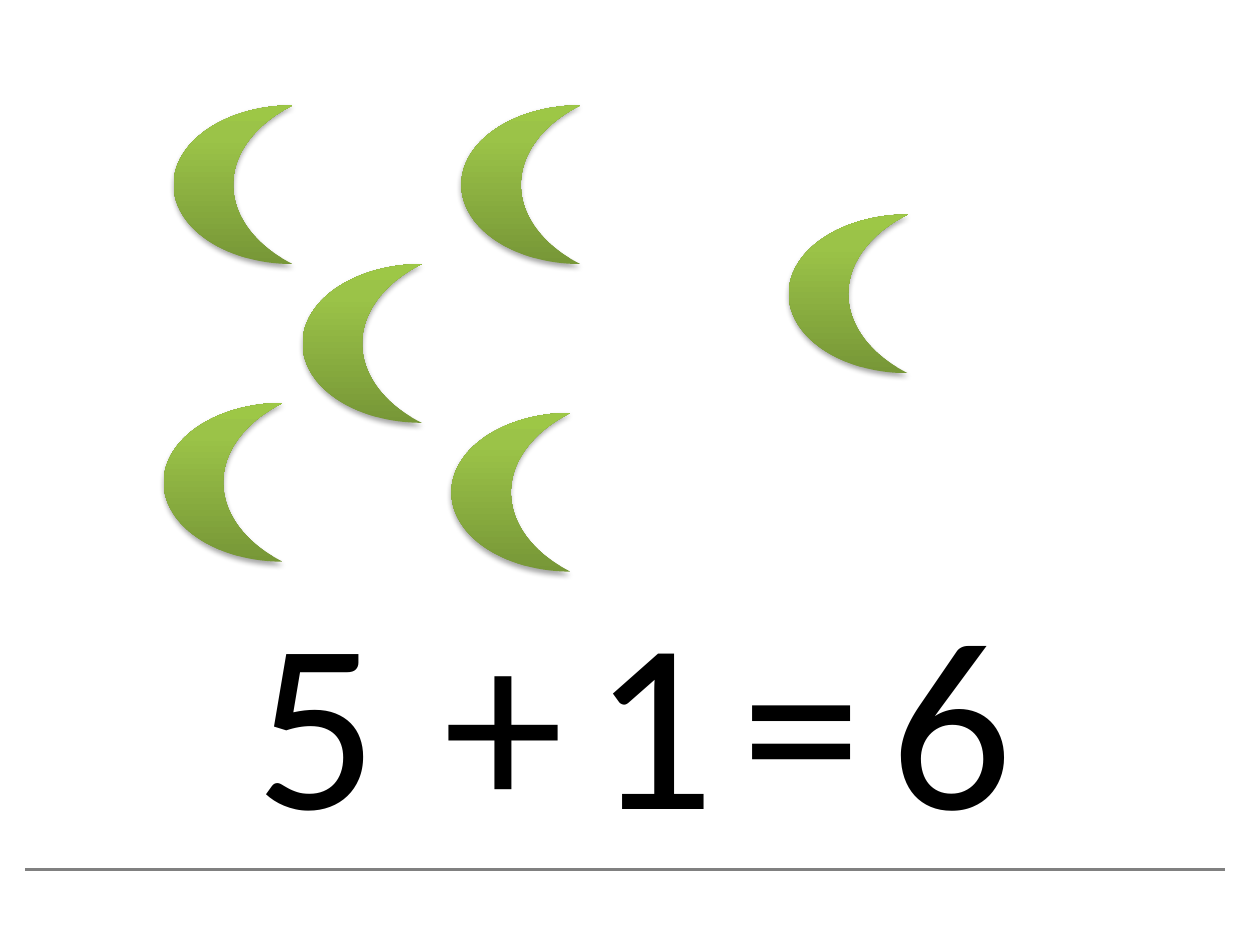
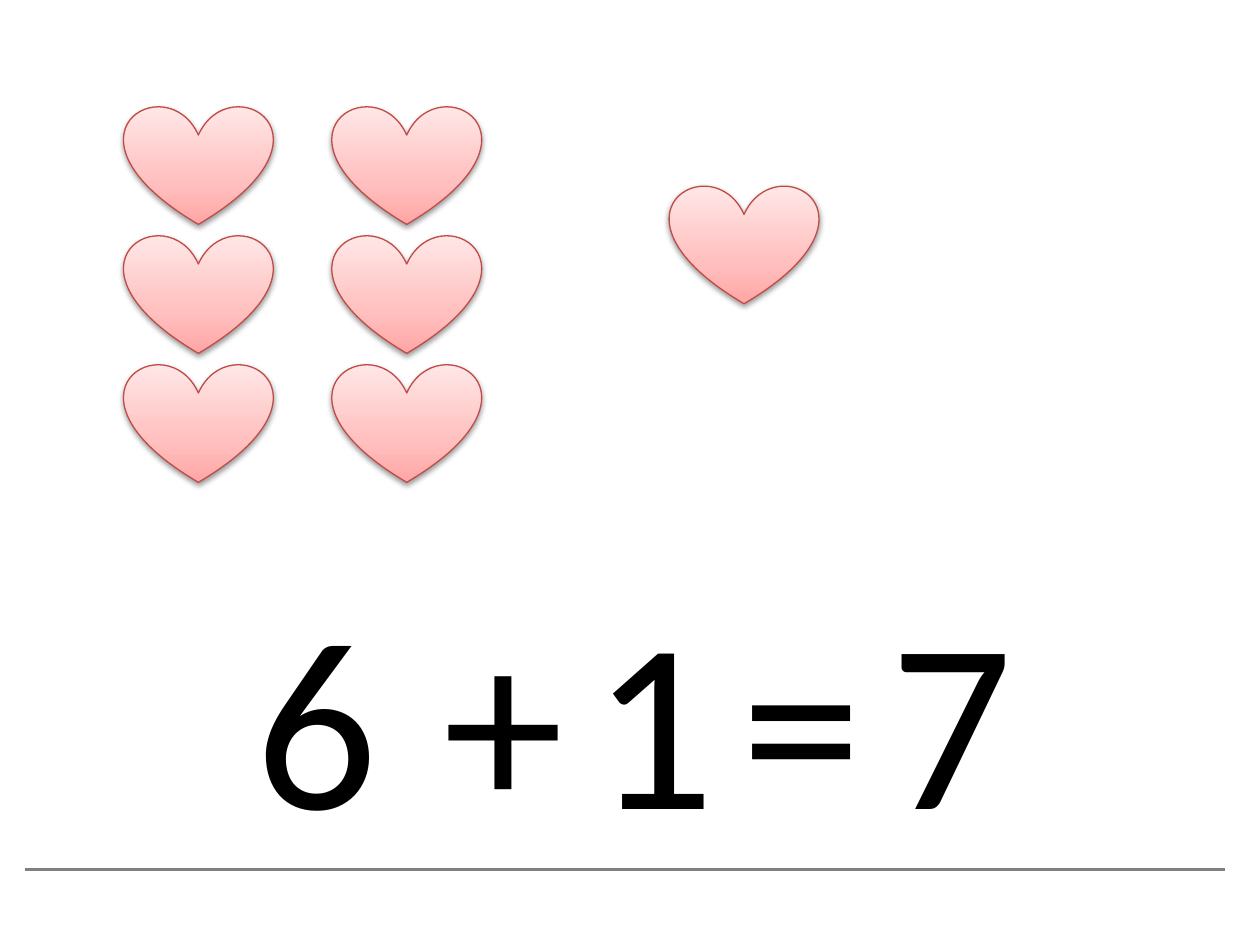
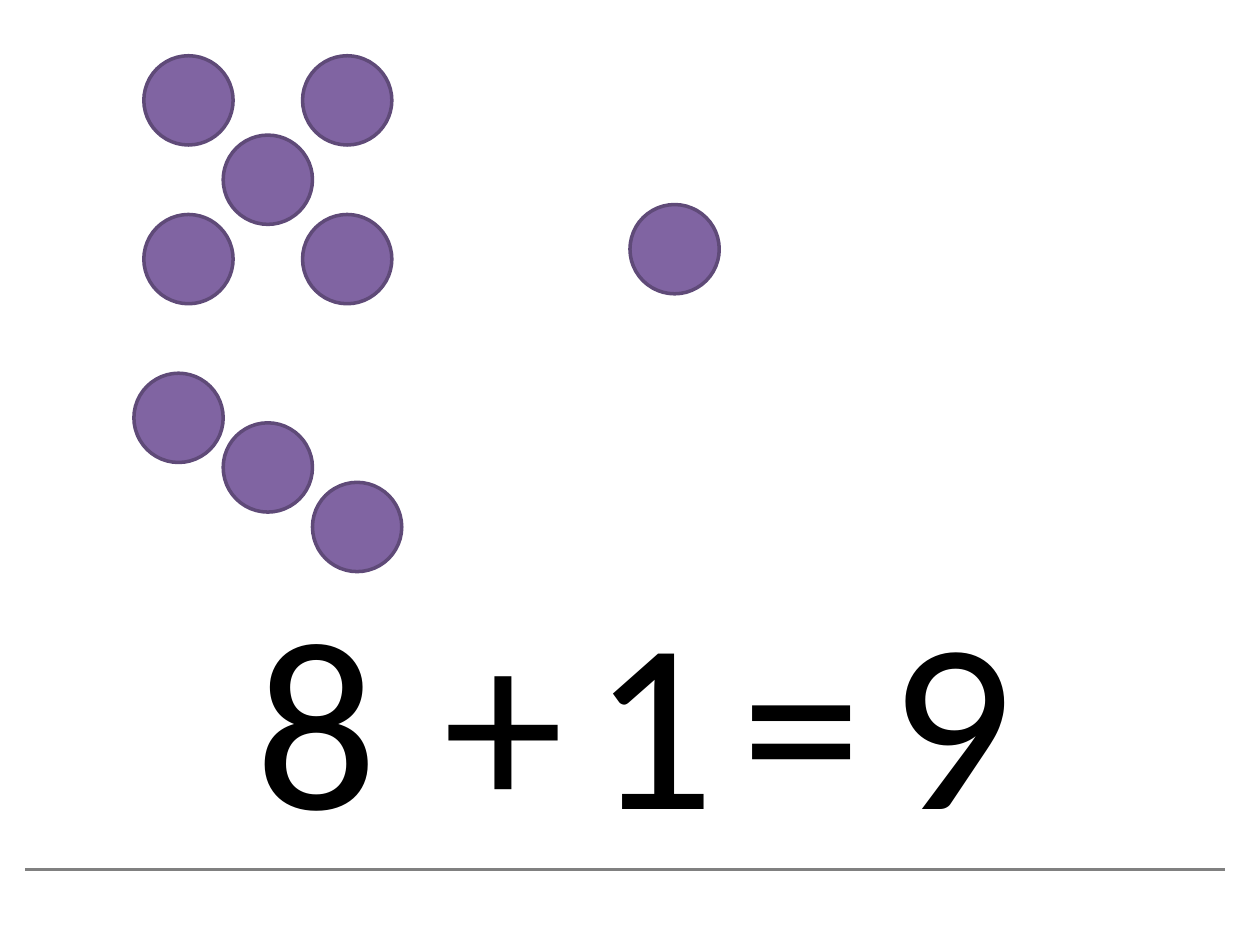
"""Build three counting slides that each add one more shape to a group."""
from lxml import etree
from pptx import Presentation
from pptx.dml.color import RGBColor
from pptx.enum.shapes import MSO_CONNECTOR, MSO_SHAPE
from pptx.enum.text import MSO_AUTO_SIZE
from pptx.oxml.ns import qn
from pptx.util import Pt

MOON, HEART, OVAL = MSO_SHAPE.MOON, MSO_SHAPE.HEART, MSO_SHAPE.OVAL
STRAIGHT = MSO_CONNECTOR.STRAIGHT
FIT_TEXT = MSO_AUTO_SIZE.SHAPE_TO_FIT_TEXT

FONT, FONT_SIZE = "Calibri", 138
BLACK, GRAY = "000000", "808080"
RULE_LEFT, RULE_RIGHT, RULE_TOP = 14.4, 699.84, 496.8
SUM_TOP, SUM_WIDTH, SUM_HEIGHT = 321.12, 108, 174.24
SUM_LEFT, PLUS_LEFT, SIGN_STEP = 138.9, 246.61, 85.04
ONE_LEFT, EQUALS_LEFT, TOTAL_LEFT = [PLUS_LEFT + SIGN_STEP * i for i in (1, 2, 3)]

HEART_COLUMNS = (189.92, 70.87)
HEART_ROWS = [60.21 + 73.7 * i for i in (2, 1, 0)]

SLIDES = [
    {
        "start": "5",
        "total": "6",
        "kind": MOON,
        "size": (68.03, 90.71),
        "gradient": [(0, "779737"), (80, "9BC348"), (100, "9DC746")],
        "shadow": {"alpha": 35, "dist": 1.8},
        "group": [(99.21, 60.21), (263.62, 60.21), (93.54, 230.29),
                  (172.91, 150.92), (257.95, 235.96)],
        "one_more": (450.71, 122.56),
    },
    {
        "start": "6",
        "total": "7",
        "kind": HEART,
        "size": (85.04, 68.03),
        "gradient": [(0, "FFA6A5"), (35, "FFC0BF"), (100, "FFE7E7")],
        "line": ("BF4C48", 0.75),
        "shadow": {"alpha": 38, "dist": 1.6},
        "group": [(x, y) for y in HEART_ROWS for x in HEART_COLUMNS],
        "one_more": (382.68, 105.56),
    },
    {
        "start": "8",
        "total": "9",
        "kind": OVAL,
        "size": (51.02, 51.02),
        "fill": "8064A2",
        "line": ("5F4A78", 2),
        "group": [(82.2, 31.86), (127.56, 77.21), (82.2, 122.56),
                  (76.54, 213.27), (172.91, 122.56), (172.91, 31.86),
                  (127.56, 241.62), (178.58, 275.64)],
        "one_more": (360, 116.89),
    },
]


def rgb(value):
    return RGBColor.from_string(value)


def add_color(parent, value):
    return etree.SubElement(parent, qn("a:srgbClr"), val=value)


def set_gradient(sp, stops):
    sp.fill.gradient()
    sp.fill.gradient_angle = 90
    stop_list = sp.element.spPr.find(qn("a:gradFill")).find(qn("a:gsLst"))
    for stop in list(stop_list):
        stop_list.remove(stop)
    for percent, color in stops:
        stop = etree.SubElement(stop_list, qn("a:gs"), pos=str(percent * 1000))
        add_color(stop, color)


def set_shadow(sp, alpha, dist):
    effects = sp.element.spPr.find(qn("a:effectLst"))
    shadow = etree.SubElement(
        effects, qn("a:outerShdw"), blurRad=str(Pt(3.15)), dist=str(Pt(dist)),
        dir="5400000", rotWithShape="0")
    etree.SubElement(add_color(shadow, BLACK), qn("a:alpha"), val=str(alpha * 1000))


def add_counter(s, data, left, top):
    width, height = data["size"]
    sp = s.shapes.add_shape(data["kind"], Pt(left), Pt(top), Pt(width), Pt(height))
    sp.shadow.inherit = False
    if "gradient" in data:
        set_gradient(sp, data["gradient"])
    else:
        sp.fill.solid()
        sp.fill.fore_color.rgb = rgb(data["fill"])
    if "line" in data:
        color, weight = data["line"]
        sp.line.color.rgb = rgb(color)
        sp.line.width = Pt(weight)
    else:
        sp.line.fill.background()
    if "shadow" in data:
        set_shadow(sp, **data["shadow"])


def add_rule(s):
    line = s.shapes.add_connector(
        STRAIGHT, Pt(RULE_LEFT), Pt(RULE_TOP), Pt(RULE_RIGHT), Pt(RULE_TOP))
    line.line.color.rgb = rgb(GRAY)
    line.line.width = Pt(1.5)
    etree.SubElement(line.element.spPr, qn("a:effectLst"))


def add_sum(s, start, total):
    parts = [(start, SUM_LEFT), (total, TOTAL_LEFT), ("=", EQUALS_LEFT),
             ("+", PLUS_LEFT), ("1", ONE_LEFT)]
    for character, left in parts:
        box = s.shapes.add_textbox(Pt(left), Pt(SUM_TOP), Pt(SUM_WIDTH), Pt(SUM_HEIGHT))
        tf = box.text_frame
        tf.word_wrap = True
        tf.auto_size = FIT_TEXT
        tf.text = character
        font = tf.paragraphs[0].runs[0].font
        font.name = FONT
        font.size = Pt(FONT_SIZE)
        font.color.rgb = rgb(BLACK)


def main():
    prs = Presentation()
    prs.slide_width, prs.slide_height = Pt(720), Pt(540)
    for data in SLIDES:
        s = prs.slides.add_slide(prs.slide_layouts[6])
        add_rule(s)
        add_sum(s, data["start"], data["total"])
        for left, top in data["group"] + [data["one_more"]]:
            add_counter(s, data, left, top)
    prs.save("out.pptx")


if __name__ == "__main__":
    main()
